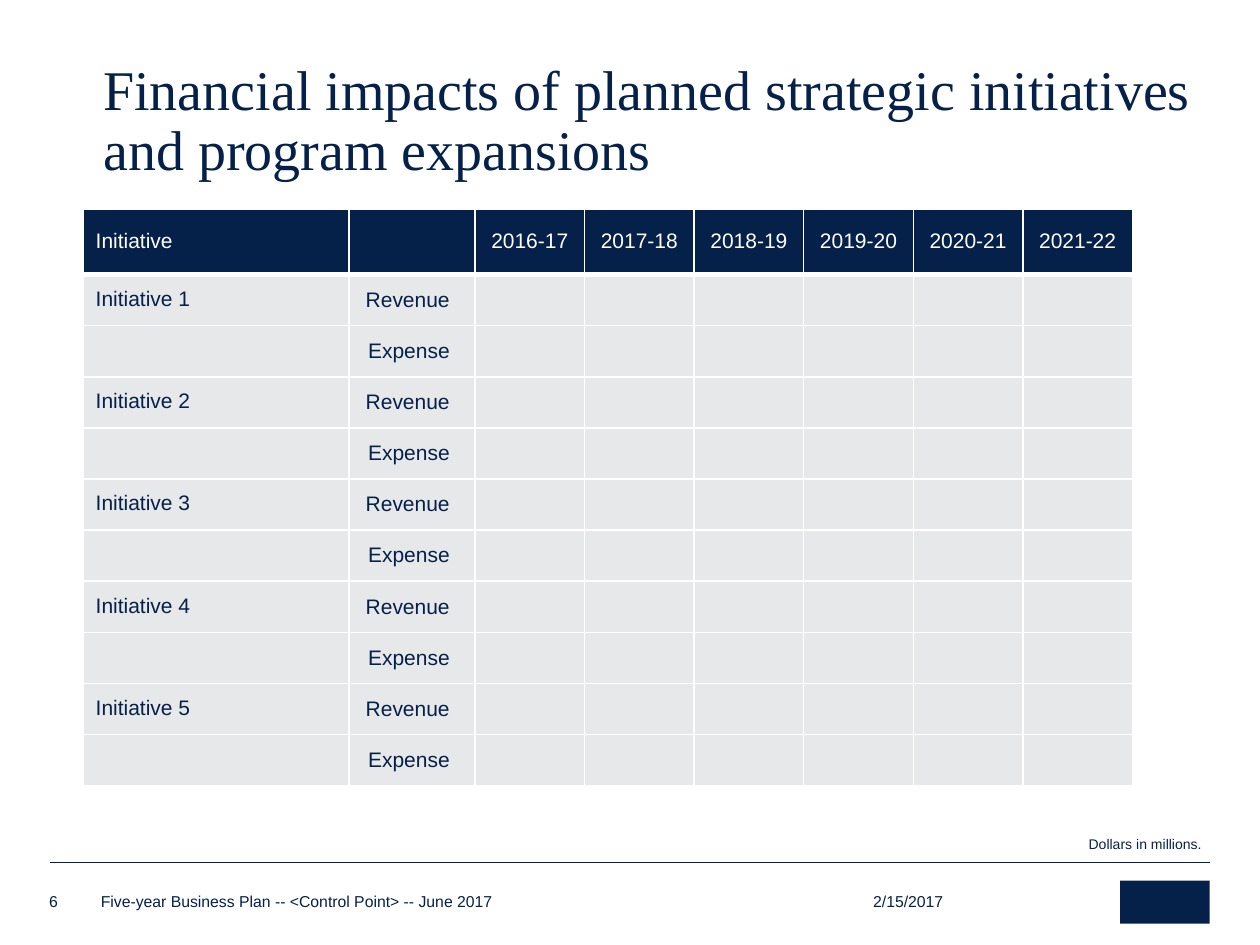
from lxml.etree import SubElement
from pptx import Presentation
from pptx.dml.color import RGBColor
from pptx.enum.shapes import MSO_CONNECTOR, MSO_SHAPE
from pptx.enum.text import MSO_ANCHOR as ANCHOR, PP_ALIGN as ALIGN
from pptx.oxml.ns import qn
from pptx.util import Inches, Pt

NAVY, GRAY, WHITE = "052049", "E7E8E9", "FFFFFF"
TITLE = "Financial impacts of planned strategic initiatives and program expansions"
YEARS = ["2016-17", "2017-18", "2018-19", "2019-20", "2020-21", "2021-22"]
INITIATIVES = [f"Initiative {n}" for n in range(1, 6)]
MEASURES = ["Revenue", "Expense"]
COL_WIDTHS = [2.11, 1] + [0.87] * len(YEARS)
HEADER_HEIGHT, ROW_HEIGHT = 0.52, 0.4

# text, (left, top, width, height), size, anchor, line spacing
NOTES = [
    ("2/15/2017", (6.93, 7.06, 1.01, 0.17), 9, ANCHOR.BOTTOM, None),
    ("Five-year Business Plan -- <Control Point> -- June 2017",
     (0.8, 7.08, 4.71, 0.15), 9, ANCHOR.BOTTOM, None),
    ("6", (0.39, 7.06, 0.27, 0.17), 9, ANCHOR.BOTTOM, None),
    ("Dollars in millions.", (8.64, 6.65, 1.66, 0.12), 8, ANCHOR.TOP, 0.9),
]


def rgb(color):
    return RGBColor.from_string(color)


def place(shape, box):
    shape.left, shape.top, shape.width, shape.height = map(Inches, box)


def write(tf, text, size, color=NAVY, font="Arial", align=ALIGN.LEFT, spacing=None):
    p = tf.paragraphs[0]
    p.alignment, p.line_spacing = align, spacing
    r = p.add_run()
    r.text = text
    r.font.size, r.font.name, r.font.bold = Pt(size), font, False
    r.font.color.rgb = rgb(color)


def add_note(s, text, box, size, anchor, spacing):
    tf = s.shapes.add_textbox(*map(Inches, box)).text_frame
    tf.word_wrap, tf.vertical_anchor = True, anchor
    tf.margin_left = tf.margin_right = tf.margin_top = tf.margin_bottom = 0
    write(tf, text, size, spacing=spacing)


def style_cell(cell, fill, bottom=1, top=1):
    """Fill a cell and give it white borders, with widths in points."""
    cell.vertical_anchor = ANCHOR.MIDDLE
    tc_pr = cell._tc.get_or_add_tcPr()
    for side, width in (("L", 1), ("R", 1), ("T", top), ("B", bottom)):
        ln = SubElement(tc_pr, qn(f"a:ln{side}"), w=str(Pt(width)))
        SubElement(SubElement(ln, qn("a:solidFill")), qn("a:srgbClr"), val=WHITE)
    cell.fill.solid()
    cell.fill.fore_color.rgb = rgb(fill)


def add_impact_table(s):
    rows = [["Initiative", ""] + YEARS]
    for name in INITIATIVES:
        for i, measure in enumerate(MEASURES):
            rows.append([name if i == 0 else "", measure] + [""] * len(YEARS))
    heights = [HEADER_HEIGHT] + [ROW_HEIGHT] * (len(rows) - 1)
    table = s.shapes.add_table(
        len(rows), len(COL_WIDTHS), Inches(0.66), Inches(1.66),
        Inches(sum(COL_WIDTHS)), Inches(sum(heights))).table
    for col, width in zip(table.columns, COL_WIDTHS):
        col.width = Inches(width)
    for r, (row, height) in enumerate(zip(rows, heights)):
        table.rows[r].height = Inches(height)
        for c, text in enumerate(row):
            cell, header = table.cell(r, c), r == 0
            style_cell(cell, NAVY if header else GRAY,
                       bottom=3 if header else 1, top=3 if r == 1 else 1)
            measure = c == 1 and not header
            if measure:
                cell.margin_right = Inches(0.2)
            if text:
                align = ALIGN.RIGHT if measure else ALIGN.CENTER if c else ALIGN.LEFT
                write(cell.text_frame, text, 12, WHITE if header else NAVY,
                      align=align, spacing=None if measure else 0.9)


def main():
    prs = Presentation()
    prs.slide_width, prs.slide_height = Inches(10), Inches(7.5)
    s = prs.slides.add_slide(prs.slide_layouts[5])

    rule = s.shapes.add_connector(
        MSO_CONNECTOR.STRAIGHT, Inches(0.4), Inches(6.84), Inches(9.6), Inches(6.84))
    rule.line.color.rgb, rule.line.width = rgb(NAVY), Pt(0.25)
    SubElement(rule._element.spPr, qn("a:effectLst"))

    emblem = s.shapes.add_shape(
        MSO_SHAPE.RECTANGLE, *map(Inches, (8.89, 6.99, 0.71, 0.34)))
    emblem.shadow.inherit = False
    emblem.fill.solid()
    emblem.fill.fore_color.rgb = rgb(NAVY)
    emblem.line.fill.background()

    title = s.shapes.title
    place(title, (0.72, 0.48, 8.84, 1.02))
    title.text_frame.word_wrap = True
    title.text_frame.vertical_anchor = ANCHOR.BOTTOM
    write(title.text_frame, TITLE, 32, font="Times New Roman", spacing=0.9)

    add_impact_table(s)
    for note in NOTES:
        add_note(s, *note)
    prs.save("out.pptx")


if __name__ == "__main__":
    main()
